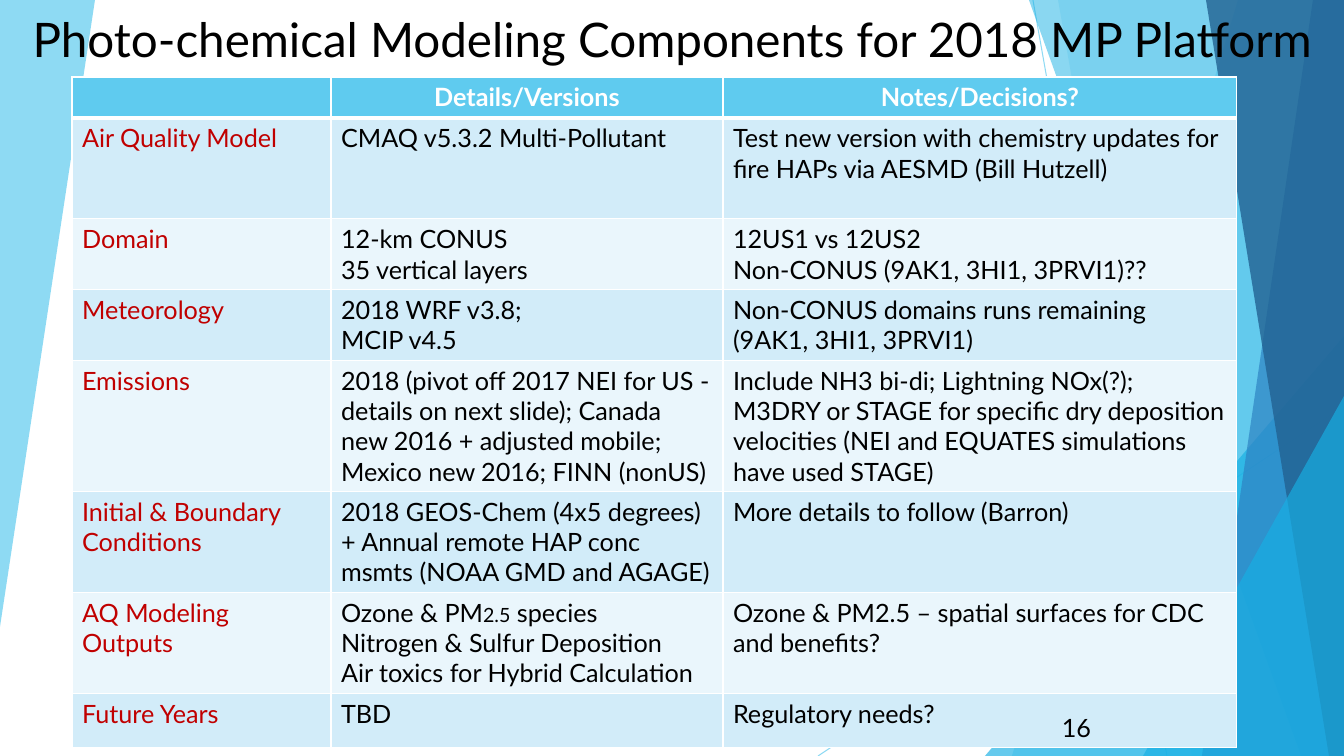
"""Build the slide on photo-chemical modeling components for the 2018 platform."""
from dataclasses import dataclass

from lxml.etree import SubElement
from pptx import Presentation
from pptx.dml.color import RGBColor
from pptx.enum.shapes import MSO_CONNECTOR as Connector, MSO_SHAPE as Shape
from pptx.enum.text import MSO_ANCHOR as Anchor, PP_ALIGN as Align
from pptx.oxml import parse_xml
from pptx.oxml.ns import nsdecls, qn
from pptx.util import Pt

TITLE = "Photo-chemical Modeling Components for 2018 MP Platform"
NUMBER = "16"
HEADER = ("", "Details/Versions", "Notes/Decisions?")
BODY = [
    ("Air Quality Model", "CMAQ v5.3.2 Multi-Pollutant",
     "Test new version with chemistry updates for fire HAPs via AESMD (Bill Hutzell)"),
    ("Domain", "12-km CONUS\n35 vertical layers",
     "12US1 vs 12US2\nNon-CONUS (9AK1, 3HI1, 3PRVI1)??"),
    ("Meteorology", "2018 WRF v3.8;\nMCIP v4.5",
     "Non-CONUS domains runs remaining (9AK1, 3HI1, 3PRVI1)"),
    ("Emissions",
     "2018 (pivot off 2017 NEI for US - details on next slide); Canada new 2016 "
     "+ adjusted mobile; Mexico new 2016; FINN (nonUS)",
     "Include NH3 bi-di; Lightning NOx(?); M3DRY or STAGE for specific dry deposition "
     "velocities (NEI and EQUATES simulations have used STAGE)"),
    ("Initial & Boundary Conditions",
     "2018 GEOS-Chem (4x5 degrees) + Annual remote HAP conc msmts (NOAA GMD and AGAGE)",
     "More details to follow (Barron)"),
    ("AQ Modeling Outputs",
     "Ozone & PM|2.5| species\nNitrogen & Sulfur Deposition\nAir toxics for Hybrid Calculation",
     "Ozone & PM2.5 – spatial surfaces for CDC and benefits?"),
    ("Future Years", "TBD", "Regulatory needs?"),
]
COLUMNS = (259, 392, 514)
ROWS = (40, 101, 70, 71, 131, 101, 100, 54)
WIDTH, HEIGHT = 1344, 756
PX = 12192000 / WIDTH


@dataclass(frozen=True)
class Theme:
    """Colours, font and type sizes of the slide."""
    font: str = "Lato"
    title: int = 34
    text: int = 18
    small: int = 14
    black: str = "000000"
    white: str = "FFFFFF"
    label: str = "C00000"
    sky: str = "5FCBEF"
    cyan: str = "17B0E4"
    blue: str = "2E83C3"
    navy: str = "226292"
    bands: tuple = ("EAF6FC", "D2ECF9")


THEME = Theme()


def right_panel(top, bottom):
    return [(top, 0), (WIDTH, 0), (WIDTH, HEIGHT), (bottom, HEIGHT)]


BACKDROP = [
    ("panel", [(0, 0), (95, 0), (0, 627)], THEME.sky, 70),
    ("line", (1033, 0, 1167, HEIGHT), THEME.sky, 70),
    ("line", (WIDTH, 406, 818, HEIGHT), THEME.sky, 70),
    ("panel", right_panel(1238, 1012), THEME.sky, 36),
    ("panel", right_panel(1058, 1192), THEME.sky, 20),
    ("triangle", (985, 336), THEME.cyan, 66),
    ("panel", right_panel(1029, 1301), THEME.cyan, 50),
    ("panel", right_panel(1313, 1202), THEME.blue, 70),
    ("panel", right_panel(1206, 1329), THEME.navy, 80),
    ("triangle", (1143, 396), THEME.cyan, 66),
]


def px(*lengths):
    return [round(length * PX) for length in lengths]


def set_opacity(shape, percent):
    colour = next(shape._element.spPr.iter(qn("a:srgbClr")))
    SubElement(colour, qn("a:alpha")).set("val", str(percent * 1000))


def add_backdrop(page, kind, place, colour, opacity):
    if kind == "line":
        shape = page.shapes.add_connector(Connector.STRAIGHT, *px(*place))
        shape.line.color.rgb = RGBColor.from_string(colour)
        shape.line.width = Pt(0.75)
        SubElement(shape._element.spPr, qn("a:effectLst"))
    else:
        if kind == "panel":
            builder = page.shapes.build_freeform(*place[0], scale=PX)
            builder.add_line_segments(place[1:], close=True)
            shape = builder.convert_to_shape()
        else:
            left, top = place
            shape = page.shapes.add_shape(
                Shape.ISOSCELES_TRIANGLE, *px(left, top, WIDTH - left, HEIGHT - top))
            shape.adjustments[0] = 1
        shape.fill.solid()
        shape.fill.fore_color.rgb = RGBColor.from_string(colour)
        shape.line.fill.background()
        shape.shadow.inherit = False
    set_opacity(shape, opacity)


def write(frame, text, colour, size=THEME.text, align=Align.LEFT, bold=False):
    """Write one paragraph per line; text between bars takes the small size."""
    for index, line in enumerate(text.split("\n")):
        para = frame.add_paragraph() if index else frame.paragraphs[0]
        para.alignment = align
        for order, part in enumerate(line.split("|")):
            if part:
                span = para.add_run()
                span.text = part
                span.font.name = THEME.font
                span.font.size = Pt(THEME.small if order % 2 else size)
                span.font.bold = bold
                span.font.color.rgb = RGBColor.from_string(colour)


def set_borders(cell, top, bottom):
    properties = cell._tc.get_or_add_tcPr()
    widths = {"lnL": 1, "lnR": 1, "lnT": top, "lnB": bottom}
    for position, (side, width) in enumerate(widths.items()):
        properties.insert(position, parse_xml(
            f'<a:{side} {nsdecls("a")} w="{Pt(width)}"><a:solidFill>'
            f'<a:srgbClr val="{THEME.white}"/></a:solidFill></a:{side}>'))


def add_components(page):
    frame = page.shapes.add_table(
        len(ROWS), len(COLUMNS), *px(72, 77, sum(COLUMNS), sum(ROWS)))
    table = frame.table
    table.first_row = table.horz_banding = False
    for column, width in zip(table.columns, px(*COLUMNS)):
        column.width = width
    for row, height in zip(table.rows, px(*ROWS)):
        row.height = height
    for row, texts in enumerate([HEADER, *BODY]):
        for column, text in enumerate(texts):
            cell = table.cell(row, column)
            cell.fill.solid()
            fill = THEME.bands[row % 2] if row else THEME.sky
            cell.fill.fore_color.rgb = RGBColor.from_string(fill)
            set_borders(cell, 3 if row == 1 else 1, 1 if row else 3)
            if row:
                write(cell.text_frame, text, THEME.black if column else THEME.label)
            else:
                write(cell.text_frame, text, THEME.white, align=Align.CENTER, bold=True)


def add_text(page, place, text, size, align, anchor):
    box = page.shapes.add_textbox(*px(*place))
    box.text_frame.word_wrap = True
    box.text_frame.vertical_anchor = anchor
    write(box.text_frame, text, THEME.black, size, align)
    return box


def main():
    deck = Presentation()
    deck.slide_width, deck.slide_height = px(WIDTH, HEIGHT)
    page = deck.slides.add_slide(deck.slide_layouts[6])
    for item in BACKDROP:
        add_backdrop(page, *item)
    add_components(page)
    title = add_text(page, (-7, 16, 1359, 56), TITLE, THEME.title, Align.CENTER, Anchor.TOP)
    title.text_frame.paragraphs[0].line_spacing = 0.8
    add_text(page, (1025, 707, 76, 40), NUMBER, THEME.text, Align.RIGHT, Anchor.MIDDLE)
    deck.save("out.pptx")


if __name__ == "__main__":
    main()
